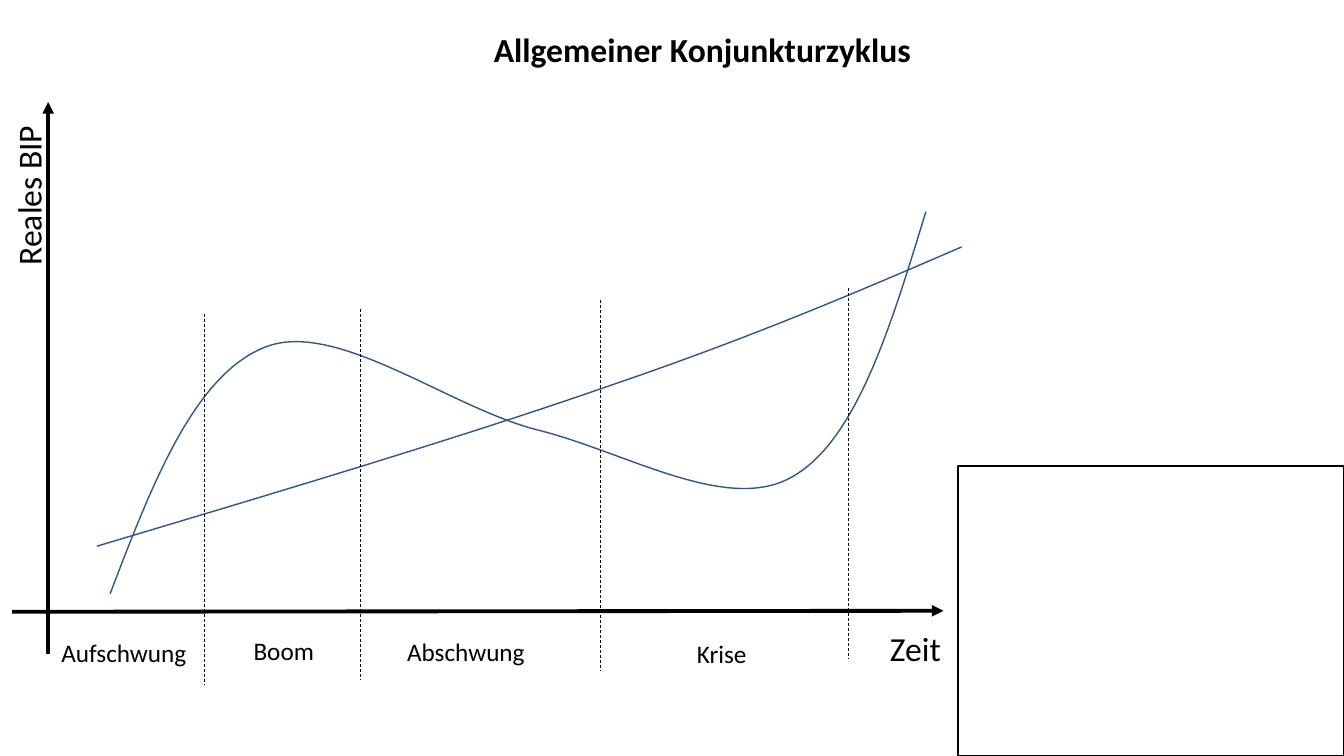
import pptx
import pptx.util
import pptx.dml.color
import pptx.enum.dml
import pptx.enum.shapes
import pptx.enum.text
import pptx.oxml.ns
import lxml.etree

Pt = pptx.util.Pt
qn = pptx.oxml.ns.qn
ALIGN = pptx.enum.text.PP_ALIGN
ANCHOR = pptx.enum.text.MSO_ANCHOR

COLORS = {"ink": "000000", "curve": "325491"}
FONT = "Calibri"

TITLE = ("Allgemeiner Konjunkturzyklus", (345.6, 17.3, 457.2, 36))
# text, (left, top, width, height), rotation
AXIS_LABELS = [
    ("Zeit", (628.6, 445, 51.1, 36), 0),
    ("Reales BIP", (-37.4, 121, 115.2, 36), 270),
]
# text, (left, top, width, height), alignment
PHASES = [
    ("Aufschwung", (36.7, 451.4, 105.1, 28.8), ALIGN.LEFT),
    ("Boom", (173.5, 450, 58.3, 28.8), ALIGN.CENTER),
    ("Abschwung", (283, 450.7, 99.4, 28.8), ALIGN.CENTER),
    ("Krise", (490.3, 452.2, 50.4, 28.8), ALIGN.CENTER),
]
AXES = [((34.4, 467.3), (34.4, 72.9)), ((8.6, 437), (673.9, 436.3))]
DIVIDER_TOPS = [(146.2, 224.2), (257.6, 221), (429.1, 214.6), (605.8, 205.5)]
DIVIDER_LENGTH = 264.4

# Start point, then two control points and an end point per segment
TREND = [
    (69.1, 390.2),
    (201.6, 350.6), (334.1, 311), (437, 275),
    (540, 239.8), (613.4, 208.1), (686.9, 176.4),
]
CYCLE = [
    (78.7, 424.1),
    (108.7, 345.6), (139, 267.1), (190.1, 247.7),
    (241.2, 228.2), (322.6, 292.3), (385.2, 307.4),
    (447.8, 323.3), (519.8, 367.2), (565.9, 340.6),
    (612, 314.6), (636.5, 232.6), (661.4, 151.2),
]
NOTE_FRAME = (684.2, 332.8, 275.8, 207.2)


def color(name):
    return pptx.dml.color.RGBColor.from_string(COLORS[name])


def set_line(line, name, width):
    line.color.rgb = color(name)
    line.width = Pt(width)


def add_label(slide, text, box, size, bold=False, rotation=0,
              align=ALIGN.LEFT, wrap=False, anchor=ANCHOR.TOP):
    label = slide.shapes.add_textbox(*map(Pt, box))
    label.rotation = rotation
    frame = label.text_frame
    frame.word_wrap = wrap
    frame.auto_size = pptx.enum.text.MSO_AUTO_SIZE.SHAPE_TO_FIT_TEXT
    frame.vertical_anchor = anchor
    paragraph = frame.paragraphs[0]
    paragraph.alignment = align
    run = paragraph.add_run()
    run.text = text
    for key, value in {"name": FONT, "size": Pt(size), "bold": bold}.items():
        setattr(run.font, key, value)
    run.font.color.rgb = color("ink")


def add_line(slide, start, end, width, dashed=False, arrow=False):
    connector = slide.shapes.add_connector(
        pptx.enum.shapes.MSO_CONNECTOR.STRAIGHT, *map(Pt, start + end))
    set_line(connector.line, "ink", width)
    if dashed:
        connector.line.dash_style = pptx.enum.dml.MSO_LINE.DASH
    properties = connector._element.spPr
    if arrow:
        lxml.etree.SubElement(properties.find(qn("a:ln")),
                              qn("a:tailEnd"), type="triangle")
    lxml.etree.SubElement(properties, qn("a:effectLst"))


def add_curve(slide, points):
    """Draw an open outline whose points form chained cubic segments."""
    builder = slide.shapes.build_freeform(*map(Pt, points[0]))
    builder.add_line_segments([tuple(map(Pt, point)) for point in points[1:]],
                              close=False)
    curve = builder.convert_to_shape()
    curve.shadow.inherit = False
    curve.fill.background()
    set_line(curve.line, "curve", 1)

    outline = next(curve._element.iter(qn("a:lnTo"))).getparent()
    corners = outline.findall(qn("a:lnTo"))
    for first in range(0, len(corners), 3):
        segment = lxml.etree.SubElement(outline, qn("a:cubicBezTo"))
        for corner in corners[first:first + 3]:
            segment.append(corner[0])
            outline.remove(corner)


def main():
    deck = pptx.Presentation()
    deck.slide_width, deck.slide_height = Pt(960), Pt(540)
    slide = deck.slides.add_slide(deck.slide_layouts[6])

    title, title_box = TITLE
    add_label(slide, title, title_box, 24, bold=True, wrap=True,
              anchor=ANCHOR.MIDDLE)
    for start, end in AXES:
        add_line(slide, start, end, 2.75, arrow=True)
    for points in (TREND, CYCLE):
        add_curve(slide, points)
    for text, box, rotation in AXIS_LABELS:
        add_label(slide, text, box, 24, rotation=rotation)
    for text, box, align in PHASES:
        add_label(slide, text, box, 18, align=align)
    for x, top in DIVIDER_TOPS:
        add_line(slide, (x, top), (x, top + DIVIDER_LENGTH), 0.5, dashed=True)

    note = slide.shapes.add_shape(pptx.enum.shapes.MSO_SHAPE.RECTANGLE,
                                  *map(Pt, NOTE_FRAME))
    note.shadow.inherit = False
    note.fill.background()
    set_line(note.line, "ink", 1)

    deck.save("out.pptx")


if __name__ == "__main__":
    main()
